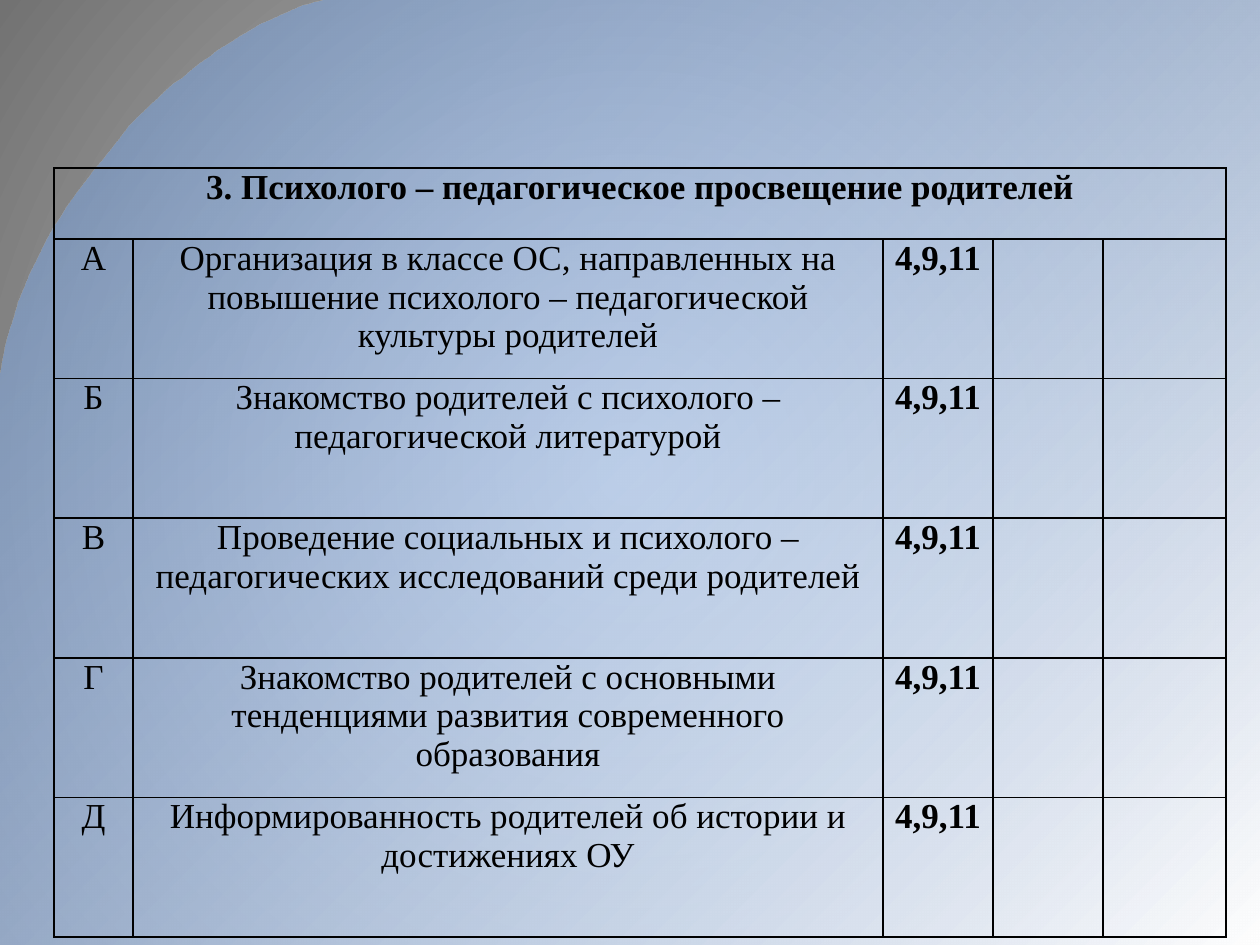
from typing import NamedTuple

from lxml.etree import SubElement
from pptx import Presentation
from pptx.dml.color import RGBColor
from pptx.enum.text import PP_ALIGN
from pptx.oxml.ns import qn
from pptx.util import Pt

EMU_PER_PX = 914400 / 126
SLIDE_WIDTH, SLIDE_HEIGHT = 1260, 945

BLACK = RGBColor(0x00, 0x00, 0x00)
WHITE = RGBColor(0xFF, 0xFF, 0xFF)
BLUE = RGBColor(0x69, 0x9D, 0xE9)
LIGHT_GREY = RGBColor(0xCF, 0xCF, 0xCF)
DARK_GREY = RGBColor(0x72, 0x72, 0x72)

FONT = "Times New Roman"
HEADING = "3. Психолого – педагогическое просвещение родителей"
TABLE_LEFT, TABLE_TOP = 54, 168
COLUMN_WIDTHS = [79, 750, 110, 110, 123]
HEADING_HEIGHT, BODY_HEIGHT = 71, 698
CELL_INSET = 9


class Point(NamedTuple):
    x: int
    y: int


class Curve(NamedTuple):
    start: Point
    control_1: Point
    control_2: Point
    end: Point


class Criterion(NamedTuple):
    letter: str
    description: str
    grades: str = "4,9,11"


CRITERIA = [
    Criterion("А", "Организация в классе ОС, направленных на повышение "
                   "психолого – педагогической культуры родителей"),
    Criterion("Б", "Знакомство родителей с психолого – педагогической литературой"),
    Criterion("В", "Проведение социальных и психолого – педагогических "
                   "исследований среди родителей"),
    Criterion("Г", "Знакомство родителей с основными тенденциями развития "
                   "современного образования"),
    Criterion("Д", "Информированность родителей об истории и достижениях ОУ"),
]

CORNER_CURVES = [
    Curve(Point(325, 0), Point(239, 20), Point(146, 105), Point(123, 135)),
    Curve(Point(123, 135), Point(101, 166), Point(20, 244), Point(0, 379)),
]


def emu(px: float) -> int:
    return round(px * EMU_PER_PX)


def curve_points(curve: Curve, steps: int = 24) -> list[tuple[float, float]]:
    """Sample a cubic Bézier curve, leaving out its start point."""
    points = []
    for step in range(1, steps + 1):
        t = step / steps
        weights = ((1 - t) ** 3, 3 * t * (1 - t) ** 2, 3 * t * t * (1 - t), t ** 3)
        points.append(tuple(sum(weight * point[axis] for weight, point in zip(weights, curve))
                            for axis in (0, 1)))
    return points


def set_gradient(fill, first: RGBColor, last: RGBColor) -> None:
    fill.gradient()
    for stop, color in zip(fill.gradient_stops, (first, last)):
        stop.color.rgb = color


def paint_background(slide) -> None:
    set_gradient(slide.background.fill, LIGHT_GREY, DARK_GREY)
    gradient = next(slide.element.iter(qn("a:gradFill")))
    gradient.remove(gradient.find(qn("a:lin")))
    circle = SubElement(gradient, qn("a:path"), path="circle")
    SubElement(circle, qn("a:fillToRect"), l="50000", t="50000", r="50000", b="50000")


def add_blue_panel(slide) -> None:
    start = CORNER_CURVES[0].start
    builder = slide.shapes.build_freeform(start.x, start.y, scale=EMU_PER_PX)
    for curve in CORNER_CURVES:
        builder.add_line_segments(curve_points(curve), close=False)
    builder.add_line_segments([(0, SLIDE_HEIGHT), (SLIDE_WIDTH, SLIDE_HEIGHT), (SLIDE_WIDTH, 0)])
    panel = builder.convert_to_shape()
    panel.shadow.inherit = False
    panel.line.fill.background()
    set_gradient(panel.fill, BLUE, WHITE)
    panel.fill.gradient_angle = 315
    first_color = next(panel.element.iter(qn("a:srgbClr")))
    SubElement(first_color, qn("a:alpha"), val="39000")


def style_cell(cell) -> None:
    properties = cell._tc.get_or_add_tcPr()
    for side in ("lnL", "lnR", "lnT", "lnB"):
        border = SubElement(properties, qn(f"a:{side}"), w=str(Pt(1)))
        solid = SubElement(border, qn("a:solidFill"))
        SubElement(solid, qn("a:srgbClr"), val=str(BLACK))
    cell.fill.background()
    cell.margin_left = cell.margin_right = emu(CELL_INSET)
    cell.margin_top = cell.margin_bottom = 0


def write_cell(cell, text: str, bold: bool) -> None:
    cell.text_frame.text = text
    paragraph = cell.text_frame.paragraphs[0]
    paragraph.alignment = PP_ALIGN.CENTER
    font = paragraph.runs[0].font
    font.name, font.size, font.bold = FONT, Pt(20), bold
    font.color.rgb = BLACK


def add_criteria_table(slide) -> None:
    count = len(CRITERIA)
    table = slide.shapes.add_table(
        count + 1, len(COLUMN_WIDTHS), emu(TABLE_LEFT), emu(TABLE_TOP),
        emu(sum(COLUMN_WIDTHS)), emu(HEADING_HEIGHT + BODY_HEIGHT)).table
    table.first_row = table.horz_banding = False
    for column, width in zip(table.columns, COLUMN_WIDTHS):
        column.width = emu(width)
    table.rows[0].height = emu(HEADING_HEIGHT)
    for cell in table.iter_cells():
        style_cell(cell)

    # Heading across all columns
    table.cell(0, 0).merge(table.cell(0, len(COLUMN_WIDTHS) - 1))
    write_cell(table.cell(0, 0), HEADING, bold=True)

    # One row per criterion, the last two columns left empty
    for row, criterion in enumerate(CRITERIA, start=1):
        table.rows[row].height = emu(BODY_HEIGHT / count)
        for column, text in enumerate(criterion):
            write_cell(table.cell(row, column), text, bold=text == criterion.grades)


def main() -> None:
    presentation = Presentation()
    presentation.slide_width = emu(SLIDE_WIDTH)
    presentation.slide_height = emu(SLIDE_HEIGHT)
    slide = presentation.slides.add_slide(presentation.slide_layouts[6])
    paint_background(slide)
    add_blue_panel(slide)
    add_criteria_table(slide)
    presentation.save("out.pptx")


if __name__ == "__main__":
    main()
